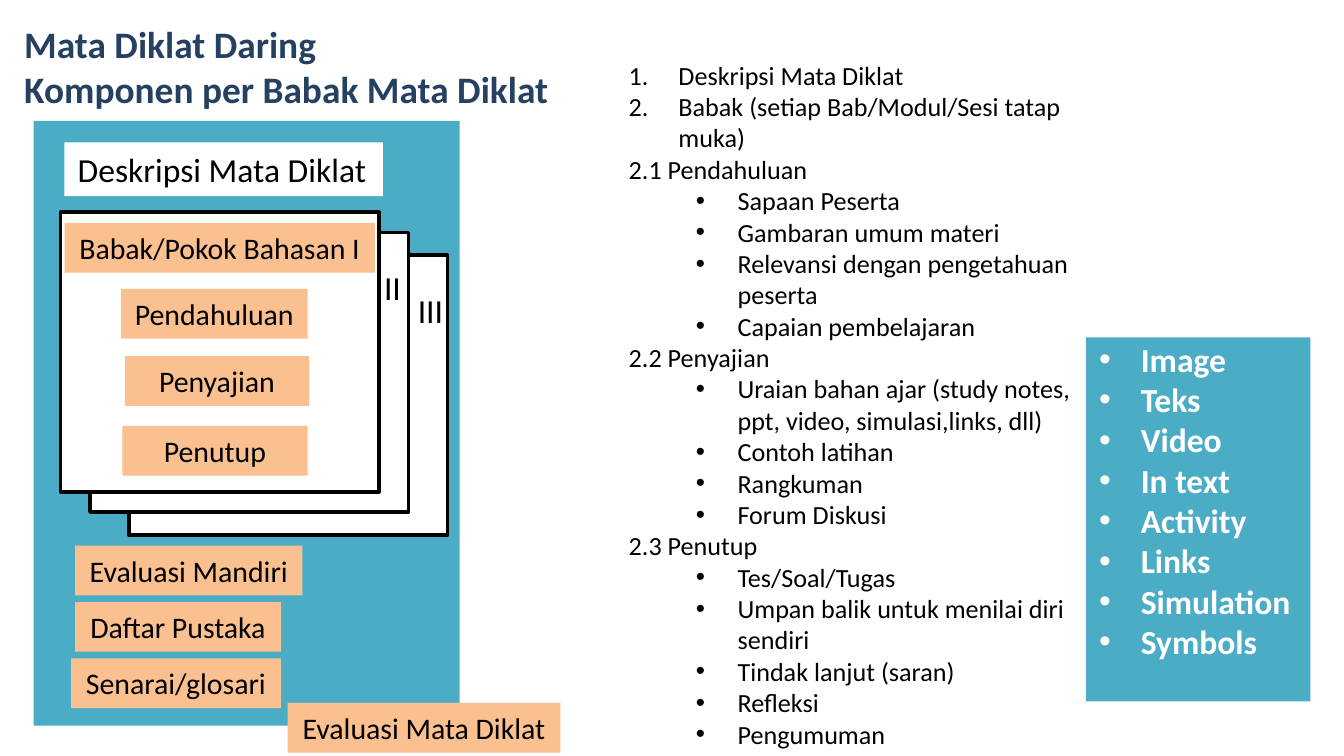
from lxml.etree import SubElement
from pptx import Presentation
from pptx.dml.color import RGBColor
from pptx.enum.shapes import MSO_SHAPE as Shape
from pptx.enum.text import MSO_ANCHOR as Anchor, MSO_AUTO_SIZE as AutoSize, PP_ALIGN as Align
from pptx.oxml.ns import qn
from pptx.util import Inches, Pt

NAVY = RGBColor(0x25, 0x40, 0x61)
TEAL = RGBColor(0x4B, 0xAC, 0xC6)
PEACH = RGBColor(0xFA, 0xC0, 0x90)
WHITE = RGBColor(0xFF, 0xFF, 0xFF)
BLACK = RGBColor(0, 0, 0)


def add_block(left, top, width, height, fill, outlined=False):
    block = page.shapes.add_shape(Shape.RECTANGLE, Inches(left), Inches(top),
                                  Inches(width), Inches(height))
    block.shadow.inherit = False
    block.fill.solid()
    block.fill.fore_color.rgb = fill
    if outlined:
        block.line.color.rgb = BLACK
        block.line.width = Pt(2)
    else:
        block.line.fill.background()
    return block


def write(frame, lines, size, color, bold=False, align=Align.LEFT):
    """Each line is (text, marker, left margin, hanging indent)."""
    for i, (text, marker, margin, hang) in enumerate(lines):
        para = frame.paragraphs[0] if i == 0 else frame.add_paragraph()
        para.alignment = align
        if marker:
            props = para._p.get_or_add_pPr()
            props.set("marL", str(Inches(margin)))
            props.set("indent", str(-Inches(hang)))
            if marker == "•":
                SubElement(props, qn("a:buFont"), typeface="Arial")
                SubElement(props, qn("a:buChar"), char=marker)
            else:
                SubElement(props, qn("a:buAutoNum"), type="arabicPeriod")
        span = para.add_run()
        span.text = text
        span.font.name = "Calibri"
        span.font.size = Pt(size)
        span.font.bold = bold
        span.font.color.rgb = color


deck = Presentation()
deck.slide_width = Inches(10)
deck.slide_height = Inches(10) * 9 // 16
page = deck.slides.add_slide(deck.slide_layouts[5])

# Title
title = page.shapes.title
title.left, title.top, title.width, title.height = (
    Inches(0.08), Inches(0.11), Inches(4.83), Inches(0.78))
title.text_frame.auto_size = AutoSize.NONE
title.text_frame.vertical_anchor = Anchor.TOP
write(title.text_frame, [(text, None, 0, 0) for text in
                         ("Mata Diklat Daring", "Komponen per Babak Mata Diklat")],
      20, NAVY, bold=True)

# Course panel with three stacked chapter cards
add_block(0.25, 0.9, 3.17, 4.5, TEAL)
for left, top in [(0.96, 1.9), (0.67, 1.73), (0.45, 1.58)]:
    add_block(left, top, 2.37, 2.08, WHITE, outlined=True)

# Labels on the panel
heading = add_block(0.48, 1.06, 2.37, 0.4, WHITE)
heading.text_frame.word_wrap = False
heading.text_frame.vertical_anchor = Anchor.TOP
write(heading.text_frame, [("Deskripsi Mata Diklat", None, 0, 0)], 18, BLACK)

components = [
    ("Babak/Pokok Bahasan I", 0.48, 1.66, 2.31),
    ("Pendahuluan", 0.9, 2.15, 1.39),
    ("Penyajian", 0.93, 2.65, 1.37),
    ("Penutup", 0.91, 3.17, 1.38),
    ("Evaluasi Mandiri", 0.56, 4.06, 1.69),
    ("Daftar Pustaka", 0.56, 4.48, 1.53),
    ("Senarai/glosari", 0.53, 4.9, 1.56),
    ("Evaluasi Mata Diklat", 2.14, 5.23, 2.03),
]
for text, left, top, width in components:
    label = add_block(left, top, width, 0.37, PEACH)
    label.text_frame.word_wrap = False
    label.text_frame.vertical_anchor = Anchor.TOP
    write(label.text_frame, [(text, None, 0, 0)], 16, BLACK, align=Align.CENTER)

# Numerals of the cards behind
for text, left, top, width in [("II", 2.76, 1.94, 0.33), ("III", 3.01, 2.11, 0.39)]:
    numeral = page.shapes.add_textbox(Inches(left), Inches(top), Inches(width), Inches(0.4))
    numeral.text_frame.word_wrap = False
    write(numeral.text_frame, [(text, None, 0, 0)], 18, BLACK)

# Outline of the course components
sections = {
    "2.1 Pendahuluan": ["Sapaan Peserta", "Gambaran umum materi",
                        "Relevansi dengan pengetahuan peserta", "Capaian pembelajaran"],
    "2.2 Penyajian": ["Uraian bahan ajar (study notes, ppt, video, simulasi,links, dll)",
                      "Contoh latihan", "Rangkuman", "Forum Diskusi"],
    "2.3 Penutup": ["Tes/Soal/Tugas", "Umpan balik untuk menilai diri sendiri",
                    "Tindak lanjut (saran)", "Refleksi", "Pengumuman"],
}
lines = [(text, "1.", 0.37, 0.37) for text in
         ("Deskripsi Mata Diklat", "Babak (setiap Bab/Modul/Sesi tatap muka)")]
for section, items in sections.items():
    lines.append((section, None, 0, 0))
    lines += [(item, "•", 0.81, 0.31) for item in items]
outline = page.shapes.add_textbox(Inches(4.58), Inches(0.39), Inches(3.67), Inches(5.68))
outline.text_frame.word_wrap = True
write(outline.text_frame, lines, 14, BLACK)
for para, line in zip(outline.text_frame.paragraphs, lines):
    para.level = 1 if line[1] == "•" else 0

# Media types
media = add_block(8.08, 2.51, 1.67, 2.71, TEAL)
media.text_frame.word_wrap = True
media.text_frame.vertical_anchor = Anchor.TOP
media.text_frame.margin_top = Inches(0.01)
write(media.text_frame, [(text, "•", 0.31, 0.31) for text in
                         ("Image", "Teks", "Video", "In text", "Activity",
                          "Links", "Simulation", "Symbols")],
      18, WHITE, bold=True)

deck.save("out.pptx")
